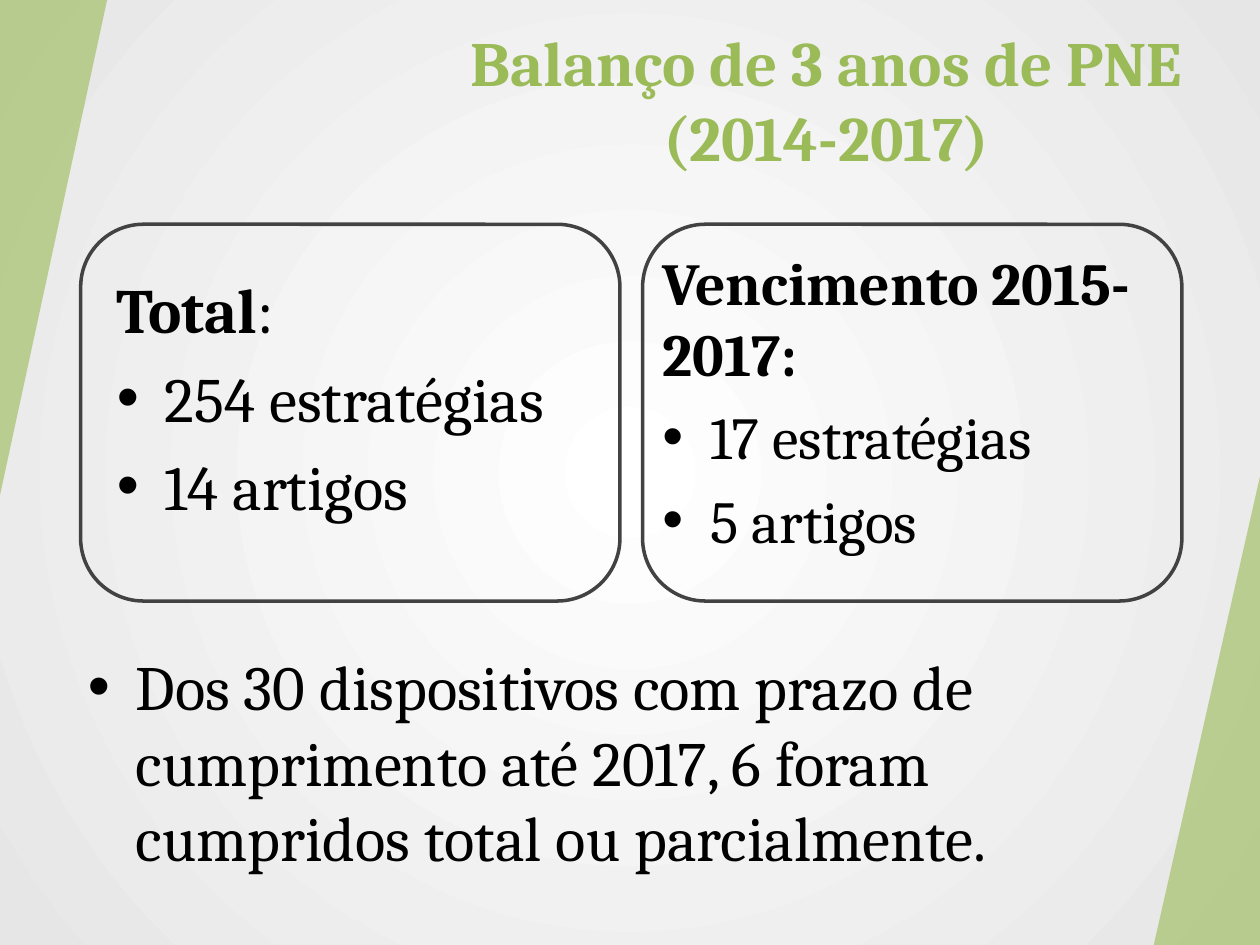
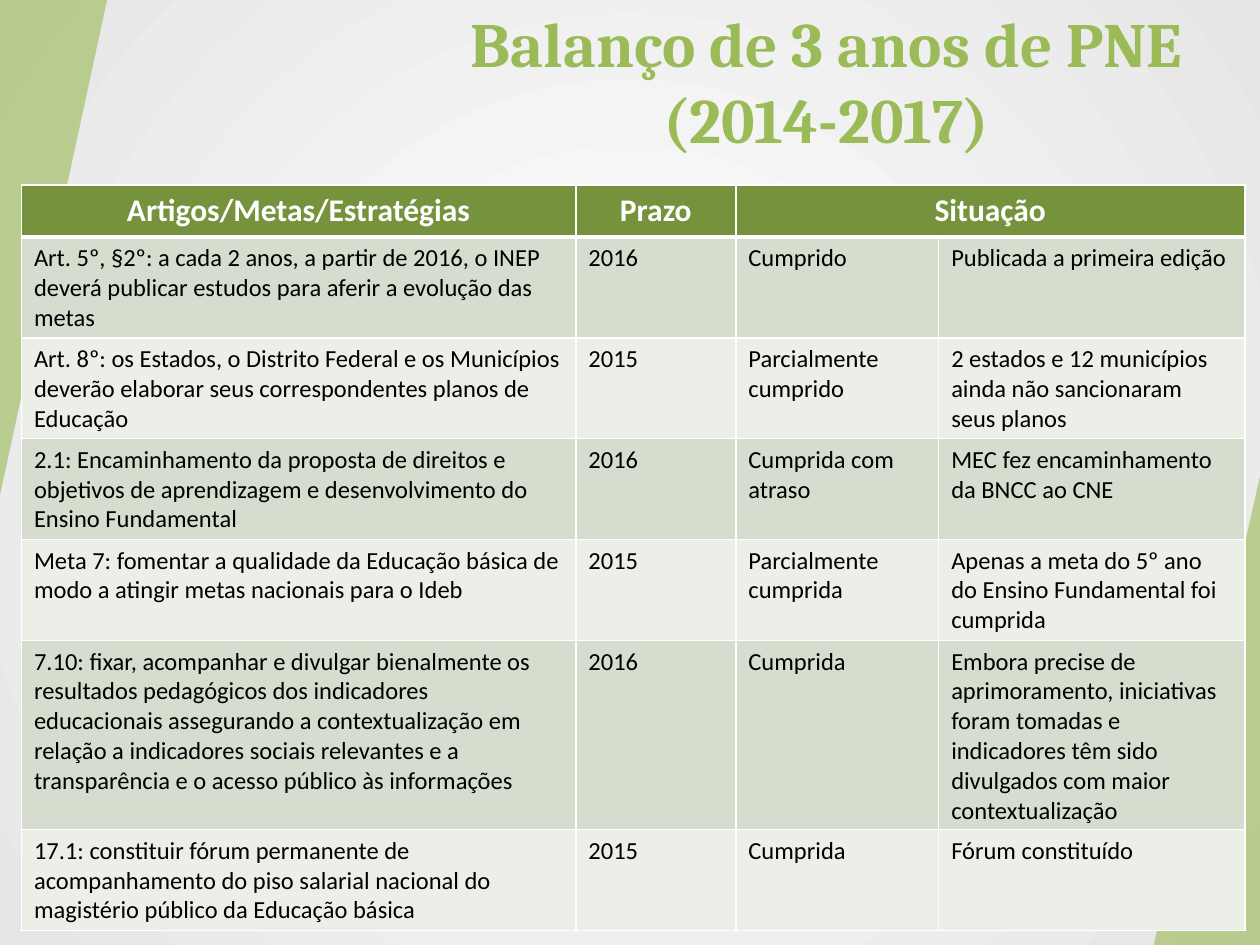
from dataclasses import dataclass

from pptx import Presentation
from pptx.dml.color import RGBColor
from pptx.enum import shapes, text
from pptx.oxml import ns, parse_xml
from pptx.util import Inches, Pt


@dataclass(frozen=True)
class Theme:
    """Colours, fonts, type sizes and grid shared by the slides."""
    green: str = "9BBB59"
    header: str = "76923C"
    bands: tuple = ("D6DCCE", "ECEEE8")
    frame: str = "424242"
    ink: str = "000000"
    white: str = "FFFFFF"
    edge: str = "E6E6E6"
    serif: str = "Cambria"
    sans: str = "Calibri"
    large: int = 36
    medium: int = 34
    heading: int = 18
    small: int = 14
    hanging: float = 0.38
    band_alpha: int = 62
    columns: int = 100
    rows: int = 75


def write(paragraph, words, *, size, font, color, bold=False, align=None,
          before=0, hanging=None):
    """Append a formatted run to a paragraph, with a bullet if it hangs."""
    run = paragraph.add_run()
    run.text = words
    run.font.size, run.font.name, run.font.bold = Pt(size), font, bold
    run.font.color.rgb = RGBColor.from_string(color)
    paragraph.alignment = align
    paragraph.space_before = Pt(before)
    if hanging:
        properties = paragraph._p.get_or_add_pPr()
        properties.set("marL", str(Inches(hanging)))
        properties.set("indent", str(-Inches(hanging)))
        properties.append(parse_xml(
            f'<a:buFont {ns.nsdecls("a")} typeface="Arial"/>'))
        properties.append(parse_xml(
            f'<a:buChar {ns.nsdecls("a")} char="•"/>'))


class Deck:
    """Draws styled elements on the current slide, placed in grid units."""

    def __init__(self, theme):
        """Open an empty 4:3 presentation."""
        self.theme = theme
        self.show = Presentation()
        self.show.slide_width, self.show.slide_height = Inches(10), Inches(7.5)
        self.slide = None

    def x(self, columns):
        """Turn columns into a length."""
        return round(self.show.slide_width * columns / self.theme.columns)

    def y(self, rows):
        """Turn rows into a length."""
        return round(self.show.slide_height * rows / self.theme.rows)

    def place(self, left, top, width, height):
        """Turn a grid box into lengths."""
        return self.x(left), self.y(top), self.x(width), self.y(height)

    def new_slide(self, title, title_top):
        """Start a slide with the shared background, bands and title."""
        self.slide = self.show.slides.add_slide(self.show.slide_layouts[6])
        self.background()
        self.band(0, 0, 8.5, 39.3, turn=90)
        self.band(91.5, 37.8, 8.5, 37.5, turn=270)
        heading = self.text_frame(35.8, title_top, 59.6, 8.5)
        heading.vertical_anchor = text.MSO_ANCHOR.MIDDLE
        write(heading.paragraphs[0], title, size=self.theme.large,
              font=self.theme.serif, color=self.theme.green, bold=True,
              align=text.PP_ALIGN.CENTER)

    def background(self):
        """Fill the slide with a radial gradient."""
        stops = "".join(
            f'<a:gs pos="{pos}"><a:srgbClr val="{color}"/></a:gs>'
            for pos, color in ((0, self.theme.white), (100000, self.theme.edge)))
        self.slide.element.cSld.insert(0, parse_xml(
            f'<p:bg {ns.nsdecls("p", "a")}><p:bgPr><a:gradFill>'
            f'<a:gsLst>{stops}</a:gsLst><a:path path="circle">'
            '<a:fillToRect l="50000" t="50000" r="50000" b="50000"/></a:path>'
            '</a:gradFill><a:effectLst/></p:bgPr></p:bg>'))

    def band(self, left, top, width, height, turn):
        """Draw a translucent triangle, turned to fill the given box."""
        x, y, w, h = self.place(left, top, width, height)
        wedge = self.slide.shapes.add_shape(
            shapes.MSO_SHAPE.RIGHT_TRIANGLE,
            x + (w - h) // 2, y + (h - w) // 2, h, w)
        wedge.rotation = turn
        wedge.shadow.inherit = False
        wedge.line.fill.background()
        wedge.fill.solid()
        wedge.fill.fore_color.rgb = RGBColor.from_string(self.theme.green)
        tint = wedge.element.spPr.find(f'.//{ns.qn("a:srgbClr")}')
        tint.append(parse_xml(f'<a:alpha {ns.nsdecls("a")} '
                              f'val="{self.theme.band_alpha * 1000}"/>'))

    def text_frame(self, *box):
        """Add a wrapping text box and give its frame."""
        frame = self.slide.shapes.add_textbox(*self.place(*box)).text_frame
        frame.word_wrap = True
        return frame

    def summary(self, box, size, bullets, lead="", tail=""):
        """Write a bold lead, if any, above a bulleted list."""
        frame = self.text_frame(*box)
        style = dict(size=size, font=self.theme.serif, color=self.theme.ink,
                     before=size * 0.2)
        paragraph = frame.paragraphs[0]
        if lead:
            write(paragraph, lead, bold=True, **style)
            if tail:
                write(paragraph, tail, **style)
        for index, words in enumerate(bullets):
            if lead or index:
                paragraph = frame.add_paragraph()
            write(paragraph, words, hanging=self.theme.hanging, **style)

    def outline(self, *box):
        """Draw an unfilled rounded frame."""
        panel = self.slide.shapes.add_shape(
            shapes.MSO_SHAPE.ROUNDED_RECTANGLE, *self.place(*box))
        panel.shadow.inherit = False
        panel.fill.background()
        panel.line.color.rgb = RGBColor.from_string(self.theme.frame)
        panel.line.width = Pt(2)

    def cell(self, cell, words, fill, edges, **style):
        """Fill, border and write one table cell."""
        properties = cell._tc.get_or_add_tcPr()
        for side, width in zip("LRTB", edges):
            properties.append(parse_xml(
                f'<a:ln{side} {ns.nsdecls("a")} w="{Pt(width)}"><a:solidFill>'
                f'<a:srgbClr val="{self.theme.white}"/></a:solidFill></a:ln{side}>'))
        cell.fill.solid()
        cell.fill.fore_color.rgb = RGBColor.from_string(fill)
        if words:
            write(cell.text_frame.paragraphs[0], words, font=self.theme.sans, **style)

    def table(self, left, top, widths, heights, records):
        """Add a banded table whose last heading spans two columns."""
        grid = self.slide.shapes.add_table(
            len(heights), len(widths),
            *self.place(left, top, sum(widths), sum(heights))).table
        for column, width in zip(grid.columns, widths):
            column.width = self.x(width)
        for row, height in zip(grid.rows, heights):
            row.height = self.y(height)
        grid.cell(0, len(widths) - 2).merge(grid.cell(0, len(widths) - 1))
        heading = dict(size=self.theme.heading, color=self.theme.white, bold=True,
                       align=text.PP_ALIGN.CENTER, fill=self.theme.header,
                       edges=(1, 1, 1, 3))
        for r, record in enumerate(records):
            style = heading if r == 0 else dict(
                size=self.theme.small, color=self.theme.ink,
                fill=self.theme.bands[(r - 1) % 2],
                edges=(1, 1, 3 if r == 1 else 1, 1))
            for c, words in enumerate(record):
                self.cell(grid.cell(r, c), words, **style)


TITLE = "Balanço de 3 anos de PNE (2014-2017)"
DEADLINES = [
    ("Artigos/Metas/Estratégias", "Prazo", "Situação", ""),
    ("Art. 5º, §2º: a cada 2 anos, a partir de 2016, o INEP deverá publicar "
     "estudos para aferir a evolução das metas",
     "2016", "Cumprido", "Publicada a primeira edição"),
    ("Art. 8º: os Estados, o Distrito Federal e os Municípios deverão elaborar "
     "seus correspondentes planos de Educação",
     "2015", "Parcialmente cumprido",
     "2 estados e 12 municípios ainda não sancionaram seus planos"),
    ("2.1: Encaminhamento da proposta de direitos e objetivos de aprendizagem "
     "e desenvolvimento do Ensino Fundamental",
     "2016", "Cumprida com atraso", "MEC fez encaminhamento da BNCC ao CNE"),
    ("Meta 7: fomentar a qualidade da Educação básica de modo a atingir metas "
     "nacionais para o Ideb",
     "2015", "Parcialmente cumprida",
     "Apenas a meta do 5º ano do Ensino Fundamental foi cumprida"),
    ("7.10: fixar, acompanhar e divulgar bienalmente os resultados pedagógicos "
     "dos indicadores educacionais assegurando a contextualização em relação a "
     "indicadores sociais relevantes e a transparência e o acesso público às "
     "informações",
     "2016", "Cumprida",
     "Embora precise de aprimoramento, iniciativas foram tomadas e indicadores "
     "têm sido divulgados com maior contextualização"),
    ("17.1: constituir fórum permanente de acompanhamento do piso salarial "
     "nacional do magistério público da Educação básica",
     "2015", "Cumprida", "Fórum constituído"),
]


def main():
    """Build both slides and save them."""
    theme = Theme()
    deck = Deck(theme)

    deck.new_slide(TITLE, title_top=3.6)
    deck.summary((8.3, 21, 40.9, 25.1), theme.large,
                 ["254 estratégias", "14 artigos"], lead="Total", tail=":")
    deck.summary((51.6, 19, 42.6, 27.1), theme.medium,
                 ["17 estratégias", "5 artigos"], lead="Vencimento 2015-2017:")
    for left in (6.4, 51):
        deck.outline(left, 17.8, 42.8, 29.9)
    deck.summary((6, 50.9, 90, 21.4), theme.large,
                 ["Dos 30 dispositivos com prazo de cumprimento até 2017, 6 foram "
                  "cumpridos total ou parcialmente."])

    deck.new_slide(TITLE, title_top=2.1)
    deck.table(1.7, 14.7, widths=(44, 12.7, 16.1, 24.3),
               heights=(4.1, 8, 8, 8, 8, 15, 8), records=DEADLINES)

    deck.show.save("out.pptx")


if __name__ == "__main__":
    main()
